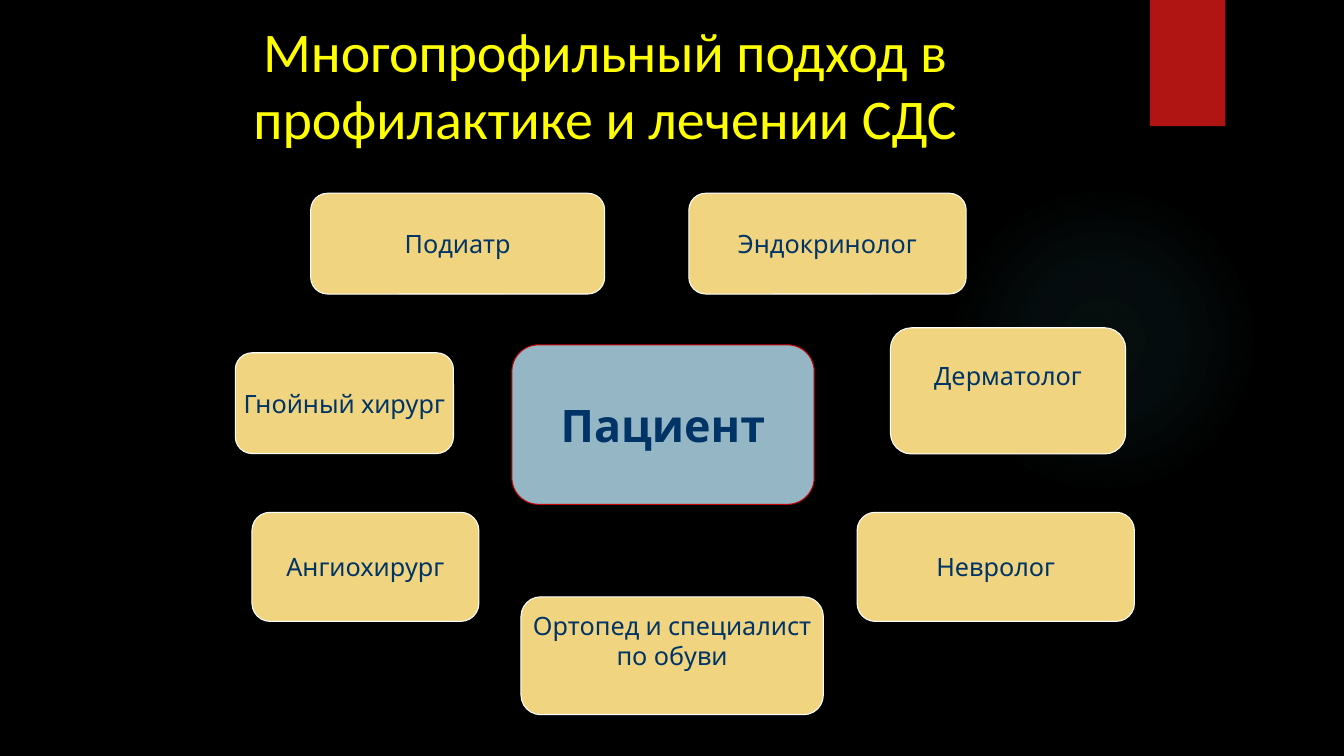
import pptx
import pptx.util
import pptx.dml.color
import pptx.enum.shapes
import pptx.enum.text
import pptx.oxml
import pptx.oxml.ns

Cm = pptx.util.Cm
Pt = pptx.util.Pt
RGB = pptx.dml.color.RGBColor
Kind = pptx.enum.shapes.MSO_SHAPE
Align = pptx.enum.text.PP_ALIGN
Anchor = pptx.enum.text.MSO_ANCHOR

BLACK = RGB(0x00, 0x00, 0x00)
WHITE = RGB(0xFF, 0xFF, 0xFF)
YELLOW = RGB(0xFF, 0xFF, 0x00)
RED = RGB(0xB0, 0x15, 0x13)
CRIMSON = RGB(0xC0, 0x00, 0x00)
NAVY = RGB(0x00, 0x33, 0x66)
STEEL = RGB(0x95, 0xB6, 0xC5)
SAND = RGB(0xF0, 0xD4, 0x7F)
TEAL = RGB(0x50, 0xB9, 0xC1)

TITLE = "Многопрофильный подход в профилактике и лечении СДС"
TITLE_AT = (2.18, 0.3, 26.14, 3.61)
GLOW_AT = (23.9, 4.65, 7.82, 7.82)
GLOW = [(0, 7), (36, 6), (69, 0), (100, 0)]
FLAG_AT = (28.98, 0, 1.9, 3.18)
PAD = 0.13
LIFT = 0.89

CENTER = ("Пациент", (12.9, 8.69, 7.62, 4.02))
DOCTORS = [
    ("Ортопед и специалист\nпо обуви", (13.13, 15.04, 7.62, 2.97), LIFT),
    ("Ангиохирург", (6.35, 12.91, 5.72, 2.75), PAD),
    ("Гнойный хирург", (5.93, 8.89, 5.5, 2.54), PAD),
    ("Подиатр", (7.83, 4.87, 7.41, 2.54), PAD),
    ("Эндокринолог", (17.36, 4.87, 6.99, 2.54), PAD),
    ("Дерматолог", (22.44, 8.26, 5.93, 3.18), LIFT),
    ("Невролог", (21.6, 12.91, 6.99, 2.75), PAD),
]

BODY = {"name": "League Spartan", "size": Pt(18), "bold": False}
HEAD = {"name": "League Spartan", "size": Pt(32), "bold": True}
TOP = {"name": "Calibri", "size": Pt(40), "bold": False}


def place(box):
    return [Cm(n) for n in box]


def write(shape, text, style, color, wrap, low=PAD):
    frame = shape.text_frame
    frame.text = text
    frame.word_wrap = wrap
    frame.vertical_anchor = Anchor.MIDDLE
    frame.margin_bottom = Cm(low)
    for para in frame.paragraphs:
        para.alignment = Align.CENTER
        for key, value in style.items():
            setattr(para.font, key, value)
        para.font.color.rgb = color


def draw(slide, kind, box, fill, line=None):
    shape = slide.shapes.add_shape(kind, *place(box))
    shape.shadow.inherit = False
    shape.fill.solid()
    shape.fill.fore_color.rgb = fill
    if line is None:
        shape.line.fill.background()
    else:
        shape.line.color.rgb = line
        shape.line.width = Pt(0.75)
    return shape


def fade(shape):
    stops = "".join(
        f'<a:gs pos="{pos * 1000}"><a:srgbClr val="{TEAL}">'
        f'<a:alpha val="{alpha * 1000}"/></a:srgbClr></a:gs>'
        for pos, alpha in GLOW
    )
    grad = pptx.oxml.parse_xml(
        f'<a:gradFill {pptx.oxml.ns.nsdecls("a")}><a:gsLst>{stops}</a:gsLst>'
        '<a:path path="circle"><a:fillToRect l="50000" t="50000" '
        'r="50000" b="50000"/></a:path></a:gradFill>'
    )
    props = shape.fill._xPr
    props.replace(props.find(pptx.oxml.ns.qn("a:solidFill")), grad)


def main():
    deck = pptx.Presentation()
    deck.slide_width, deck.slide_height = Cm(33.87), Cm(19.05)
    slide = deck.slides.add_slide(deck.slide_layouts[6])
    slide.background.fill.solid()
    slide.background.fill.fore_color.rgb = BLACK

    fade(draw(slide, Kind.OVAL, GLOW_AT, TEAL))
    draw(slide, Kind.RECTANGLE, FLAG_AT, RED)
    title = slide.shapes.add_textbox(*place(TITLE_AT))
    write(title, TITLE, TOP, YELLOW, True)

    name, box = CENTER
    shape = draw(slide, Kind.FLOWCHART_ALTERNATE_PROCESS, box, STEEL, CRIMSON)
    write(shape, name, HEAD, NAVY, False)
    for name, box, low in DOCTORS:
        shape = draw(slide, Kind.FLOWCHART_ALTERNATE_PROCESS, box, SAND, WHITE)
        write(shape, name, BODY, NAVY, False, low)

    deck.save("out.pptx")


if __name__ == "__main__":
    main()
